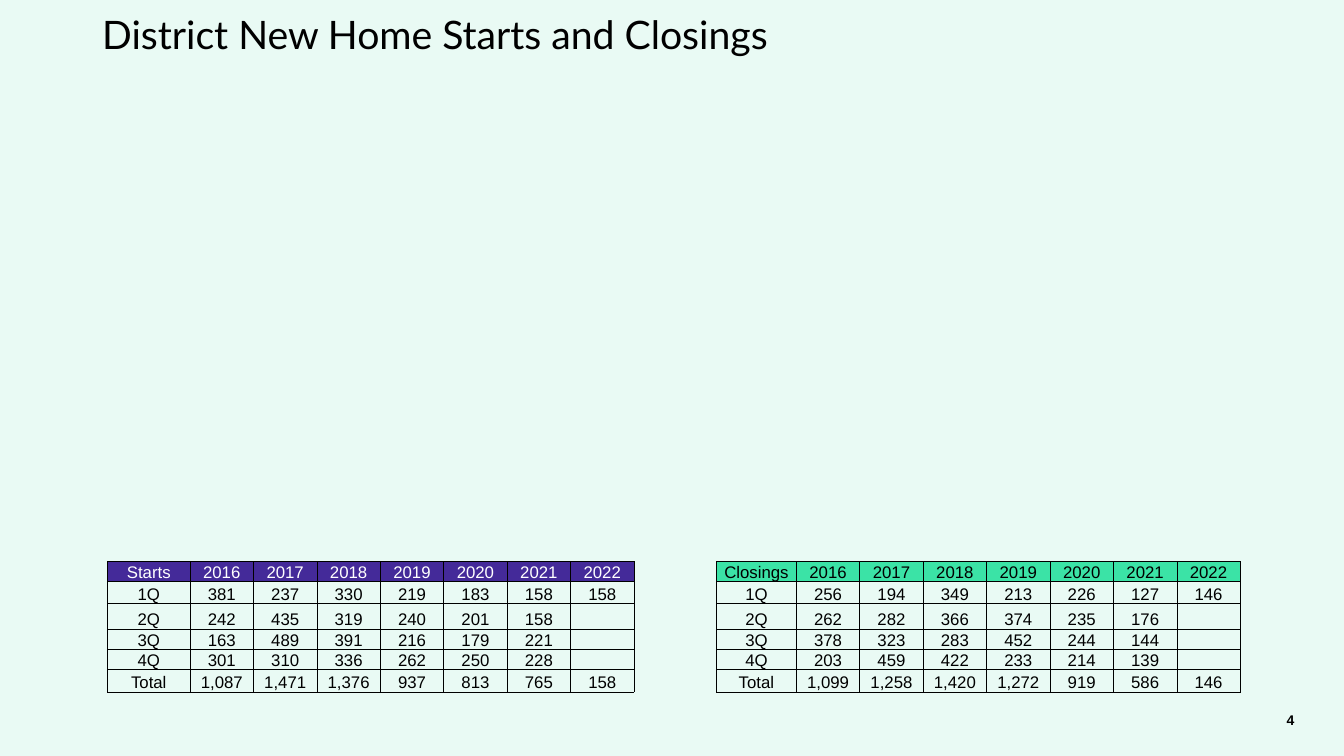
"""Build the slide of district new home starts and closings by quarter."""
from lxml import etree
from pptx import Presentation
from pptx.dml.color import RGBColor
from pptx.enum.text import MSO_ANCHOR, PP_ALIGN
from pptx.oxml.ns import qn
from pptx.util import Pt

TOP, MIDDLE, BOTTOM = MSO_ANCHOR.TOP, MSO_ANCHOR.MIDDLE, MSO_ANCHOR.BOTTOM
LEFT, CENTER, RIGHT = PP_ALIGN.LEFT, PP_ALIGN.CENTER, PP_ALIGN.RIGHT
COLORS = {
    "background": "E9FAF4",
    "starts": "442A99",
    "closings": "3BE3A6",
    "black": "000000",
    "white": "FFFFFF",
}
YEARS = ["2016", "2017", "2018", "2019", "2020", "2021", "2022"]
STARTS = [
    ["Starts", *YEARS],
    ["1Q", "381", "237", "330", "219", "183", "158", "158"],
    ["2Q", "242", "435", "319", "240", "201", "158", ""],
    ["3Q", "163", "489", "391", "216", "179", "221", ""],
    ["4Q", "301", "310", "336", "262", "250", "228", ""],
    ["Total", "1,087", "1,471", "1,376", "937", "813", "765", "158"],
]
CLOSINGS = [
    ["Closings", *YEARS],
    ["1Q", "256", "194", "349", "213", "226", "127", "146"],
    ["2Q", "262", "282", "366", "374", "235", "176", ""],
    ["3Q", "378", "323", "283", "452", "244", "144", ""],
    ["4Q", "203", "459", "422", "233", "214", "139", ""],
    ["Total", "1,099", "1,258", "1,420", "1,272", "919", "586", "146"],
]
GAP_COLUMN = len(YEARS) + 1
COLUMN_WIDTHS = [59] + [45.3] * 7 + [59, 57] + [45.3] * 7
ROW_HEIGHTS = [14.4, 15.8, 18, 14.8, 14.4, 15.8]


def format_text(frame, font_name, size, color, alignment, anchor, bold=False):
    """Remove the insets and style the only paragraph of a text frame."""
    frame.margin_left = frame.margin_right = 0
    frame.margin_top = frame.margin_bottom = 0
    frame.vertical_anchor = anchor
    paragraph = frame.paragraphs[0]
    paragraph.alignment = alignment
    for run in paragraph.runs:
        run.font.name = font_name
        run.font.size = Pt(size)
        run.font.bold = bold
        run.font.color.rgb = RGBColor.from_string(COLORS[color])


def add_borders(cell, sides):
    """Draw thin black lines on the given sides and clear the others."""
    properties = cell._tc.get_or_add_tcPr()
    for side in "LRTB":
        line = etree.SubElement(properties, qn(f"a:ln{side}"), w=str(Pt(0.5)))
        if side in sides:
            fill = etree.SubElement(line, qn("a:solidFill"))
            etree.SubElement(fill, qn("a:srgbClr"), val=COLORS["black"])
        else:
            etree.SubElement(line, qn("a:noFill"))


presentation = Presentation()
presentation.slide_width = Pt(960)
presentation.slide_height = Pt(540)
slide = presentation.slides.add_slide(presentation.slide_layouts[5])
slide.background.fill.solid()
slide.background.fill.fore_color.rgb = RGBColor.from_string(COLORS["background"])

title = slide.shapes.title
title.left, title.top, title.width, title.height = Pt(73), Pt(7.2), Pt(575), Pt(50)
title.text_frame.text = "District New Home Starts and Closings"
format_text(title.text_frame, "Lato", 28, "black", LEFT, TOP)

page_number = slide.shapes.add_textbox(Pt(715.7), Pt(500), Pt(208.8), Pt(28.8))
page_number.text_frame.word_wrap = True
page_number.text_frame.text = "4"
format_text(page_number.text_frame, "Arial", 10, "black", RIGHT, MIDDLE, bold=True)

table = slide.shapes.add_table(
    len(ROW_HEIGHTS), len(COLUMN_WIDTHS),
    Pt(76.8), Pt(401), Pt(sum(COLUMN_WIDTHS)), Pt(sum(ROW_HEIGHTS)),
).table
table.first_row = False
table.horz_banding = False
for column, width in zip(table.columns, COLUMN_WIDTHS):
    column.width = Pt(width)
for row, height in zip(table.rows, ROW_HEIGHTS):
    row.height = Pt(height)

for row_index, (starts, closings) in enumerate(zip(STARTS, CLOSINGS)):
    for column_index, value in enumerate([*starts, "", *closings]):
        cell = table.cell(row_index, column_index)
        is_gap = column_index == GAP_COLUMN
        is_starts = column_index < GAP_COLUMN
        fill_color, text_color = "background", "black"
        if row_index == 0 and not is_gap:
            fill_color = "starts" if is_starts else "closings"
            text_color = "white" if is_starts else "black"
        add_borders(cell, "LR" if is_gap else "LRTB")
        cell.fill.solid()
        cell.fill.fore_color.rgb = RGBColor.from_string(COLORS[fill_color])
        cell.margin_left = cell.margin_right = 0
        cell.margin_top = cell.margin_bottom = 0
        cell.vertical_anchor = BOTTOM
        paragraph = cell.text_frame.paragraphs[0]
        paragraph.alignment = CENTER
        if value:
            paragraph.text = value
            font = paragraph.runs[0].font
            font.name = "Arial"
            font.size = Pt(12)
            font.color.rgb = RGBColor.from_string(COLORS[text_color])
        else:
            etree.SubElement(paragraph._p, qn("a:endParaRPr"), sz="1200")

presentation.save("out.pptx")
